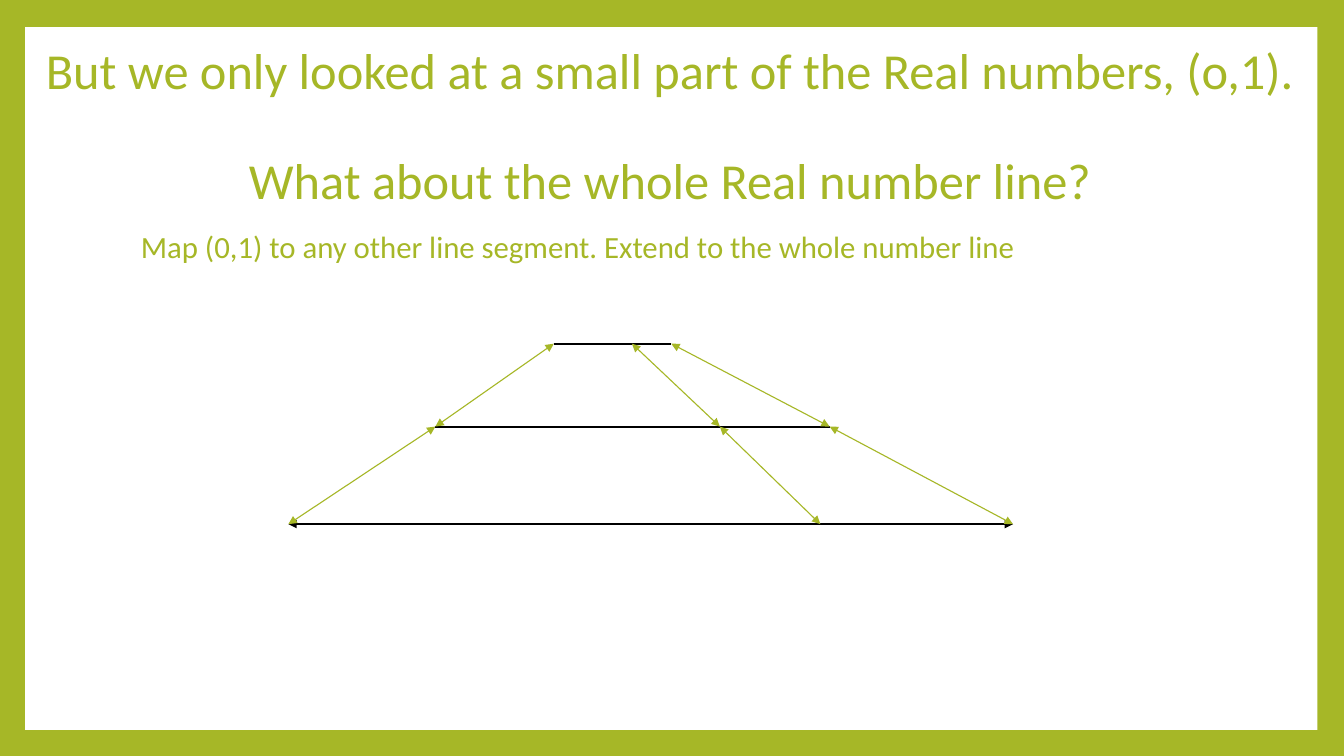
from itertools import pairwise

from lxml.etree import SubElement
from pptx import Presentation
from pptx.dml.color import RGBColor
from pptx.enum.shapes import MSO_CONNECTOR, MSO_SHAPE
from pptx.enum.text import MSO_ANCHOR, MSO_AUTO_SIZE, PP_ALIGN
from pptx.oxml.ns import qn
from pptx.util import Pt

GREEN = "A6B727"
BLACK = "000000"
WHITE = "FFFFFF"


def colour(hex_text):
    return RGBColor.from_string(hex_text)


class SlideBuilder:
    font = "Calibri"
    line_spacing = 0.9

    def __init__(self, deck):
        self.slide = deck.slides.add_slide(deck.slide_layouts[5])

    def background(self, fill):
        self.slide.background.fill.solid()
        self.slide.background.fill.fore_color.rgb = colour(fill)

    def panel(self, left, top, width, height, fill):
        box = self.slide.shapes.add_shape(
            MSO_SHAPE.RECTANGLE, Pt(left), Pt(top), Pt(width), Pt(height))
        box.shadow.inherit = False
        box.fill.solid()
        box.fill.fore_color.rgb = colour(fill)
        box.line.fill.background()
        # The panel goes behind the title placeholder.
        tree = self.slide.shapes.element
        tree.remove(box.element)
        tree.insert(2, box.element)

    def fill_frame(self, frame, lines, size, align, gap=0):
        """Fill a text frame with one paragraph per line, gap points apart."""
        frame.word_wrap = True
        frame.auto_size = MSO_AUTO_SIZE.NONE
        for index, line in enumerate(lines):
            para = frame.add_paragraph() if index else frame.paragraphs[0]
            para.alignment = align
            para.line_spacing = self.line_spacing
            para.space_before = Pt(gap if index else 0)
            span = para.add_run()
            span.text = line
            span.font.name = self.font
            span.font.size = Pt(size)
            span.font.color.rgb = colour(GREEN)

    def title(self, left, top, width, height, lines, size, gap):
        box = self.slide.shapes.title
        box.left, box.top = Pt(left), Pt(top)
        box.width, box.height = Pt(width), Pt(height)
        frame = box.text_frame
        frame.margin_left = frame.margin_right = 0
        frame.vertical_anchor = MSO_ANCHOR.MIDDLE
        self.fill_frame(frame, lines, size, PP_ALIGN.CENTER, gap)

    def text(self, left, top, width, height, lines, size):
        box = self.slide.shapes.add_textbox(
            Pt(left), Pt(top), Pt(width), Pt(height))
        self.fill_frame(box.text_frame, lines, size, PP_ALIGN.LEFT)

    def line(self, start, end, line_colour, width, arrows=False):
        connector = self.slide.shapes.add_connector(
            MSO_CONNECTOR.STRAIGHT, *map(Pt, start + end))
        connector.line.color.rgb = colour(line_colour)
        connector.line.width = Pt(width)
        properties = connector.element.spPr
        if arrows:
            outline = properties.find(qn("a:ln"))
            for tag in ("a:headEnd", "a:tailEnd"):
                SubElement(outline, qn(tag), type="triangle")
        SubElement(properties, qn("a:effectLst"))


def main():
    deck = Presentation()
    deck.slide_width, deck.slide_height = Pt(960), Pt(540)
    page = SlideBuilder(deck)
    page.background(GREEN)
    page.panel(18, 19.4, 923, 502, WHITE)
    page.title(23, 38.2, 911.5, 106.6,
               ["But we only looked at a small part of the Real numbers, (o,1).",
                "What about the whole Real number line?"], size=36, gap=39.5)
    page.text(93.6, 162, 777.6, 37.4,
              ["Map (0,1) to any other line segment. "
               "Extend to the whole number line"], size=22)

    # Each level: height, then the left end, a mapped point and the right end.
    levels = [(245.5, (395.6, 451.4, 479.5)),
              (304.7, (311, 514.2, 592.6)),
              (374.4, (206, 586, 723.6))]
    for y, (left, _, right) in levels:
        page.line((left, y), (right, y), BLACK, 1.5, arrows=y == levels[-1][0])
    for (upper_y, upper_points), (lower_y, lower_points) in pairwise(levels):
        for upper_x, lower_x in zip(upper_points, lower_points):
            page.line((upper_x, upper_y), (lower_x, lower_y),
                      GREEN, 0.79, arrows=True)
    deck.save("out.pptx")


if __name__ == "__main__":
    main()
